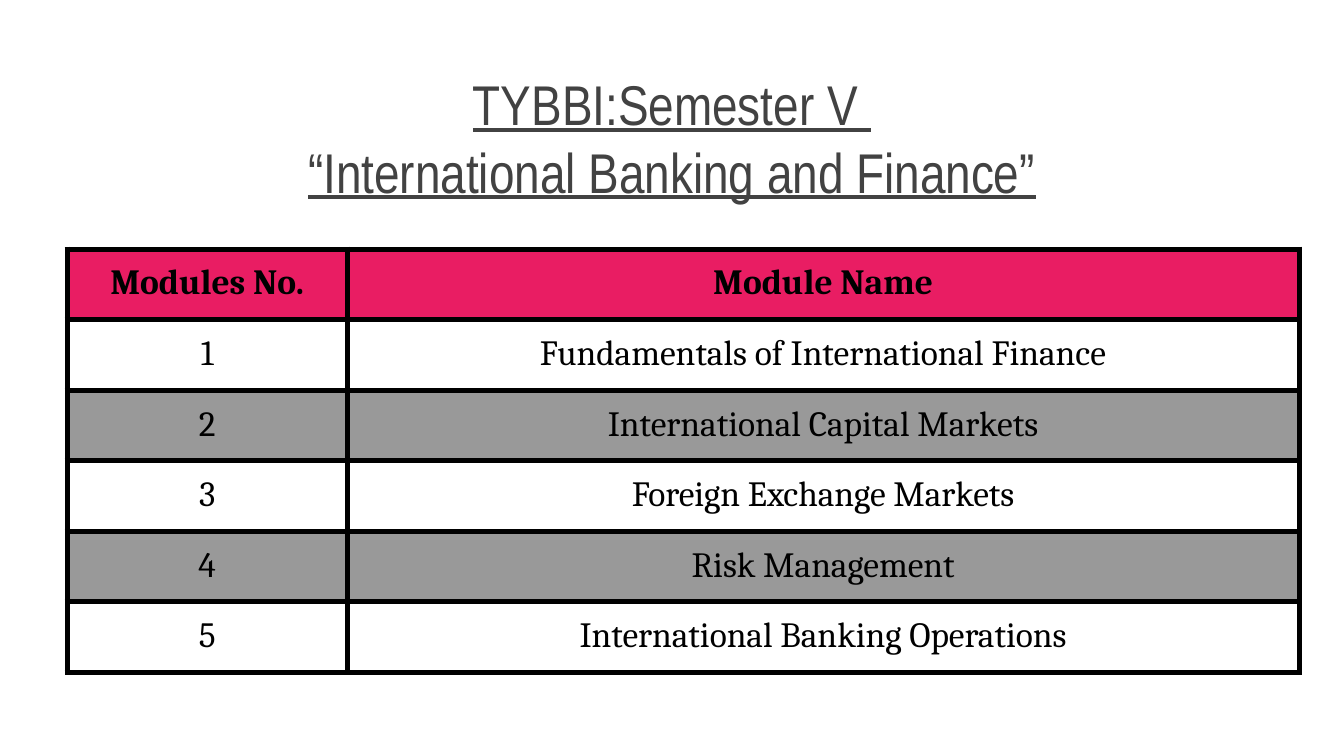
from lxml import etree
from pptx import Presentation
from pptx import util as u
from pptx.dml.color import RGBColor
from pptx.enum import text
from pptx.oxml import ns

PX = 9525
TITLE_GREY = RGBColor(0x42, 0x42, 0x42)
BLACK = RGBColor(0, 0, 0)
WHITE = RGBColor(0xFF, 0xFF, 0xFF)
PINK = RGBColor(0xE9, 0x1D, 0x63)
BAND_GREY = RGBColor(0x99, 0x99, 0x99)

TITLE = ["TYBBI:Semester V ", "“International Banking and Finance”"]
HEADINGS = ("Modules No.", "Module Name")
MODULES = [
    "Fundamentals of International Finance",
    "International Capital Markets",
    "Foreign Exchange Markets",
    "Risk Management",
    "International Banking Operations",
]


def px(*lengths):
    return [u.Emu(length * PX) for length in lengths]


def style(paragraph, face, size, color):
    paragraph.alignment = text.PP_ALIGN.CENTER
    paragraph.font.name = face
    paragraph.font.size = u.Pt(size)
    paragraph.font.color.rgb = color


def set_insets(holder):
    (inset,) = px(10)
    holder.margin_left = holder.margin_right = inset
    holder.margin_top = holder.margin_bottom = inset


def add_borders(cell, width, color):
    properties = cell._tc.get_or_add_tcPr()
    for side in ("lnL", "lnR", "lnT", "lnB"):
        line = etree.SubElement(properties, ns.qn(f"a:{side}"), w=str(u.Pt(width)))
        fill = etree.SubElement(line, ns.qn("a:solidFill"))
        etree.SubElement(fill, ns.qn("a:srgbClr"), val=str(color))


def add_title(slide, left, top, width, height):
    frame = slide.shapes.add_textbox(*px(left, top, width, height)).text_frame
    frame.word_wrap = True
    set_insets(frame)
    frame.text = "\n".join(TITLE)
    for paragraph in frame.paragraphs:
        style(paragraph, "Arial Narrow", 30, TITLE_GREY)
        paragraph.font.underline = True


def add_modules(slide, left, top, width, height, number_width):
    rows = [HEADINGS] + [(str(n), name) for n, name in enumerate(MODULES, 1)]
    box = px(left, top, width, height)
    table = slide.shapes.add_table(len(rows), len(HEADINGS), *box).table
    for column, size in zip(table.columns, px(number_width, width - number_width)):
        column.width = size
    for r, row in enumerate(rows):
        is_heading = r == 0
        shade = PINK if is_heading else WHITE if r % 2 else BAND_GREY
        for c, label in enumerate(row):
            cell = table.cell(r, c)
            set_insets(cell)
            add_borders(cell, 3, BLACK)
            cell.fill.solid()
            cell.fill.fore_color.rgb = shade
            cell.text = label
            paragraph = cell.text_frame.paragraphs[0]
            style(paragraph, "Cambria", 19, BLACK)
            paragraph.font.bold = is_heading


def main():
    deck = Presentation()
    deck.slide_width, deck.slide_height = px(960, 540)
    slide = deck.slides.add_slide(deck.slide_layouts[6])
    add_title(slide, 0, 40, 960, 115)
    add_modules(slide, 48, 178, 880, 288, number_width=200)
    deck.save("out.pptx")


if __name__ == "__main__":
    main()
